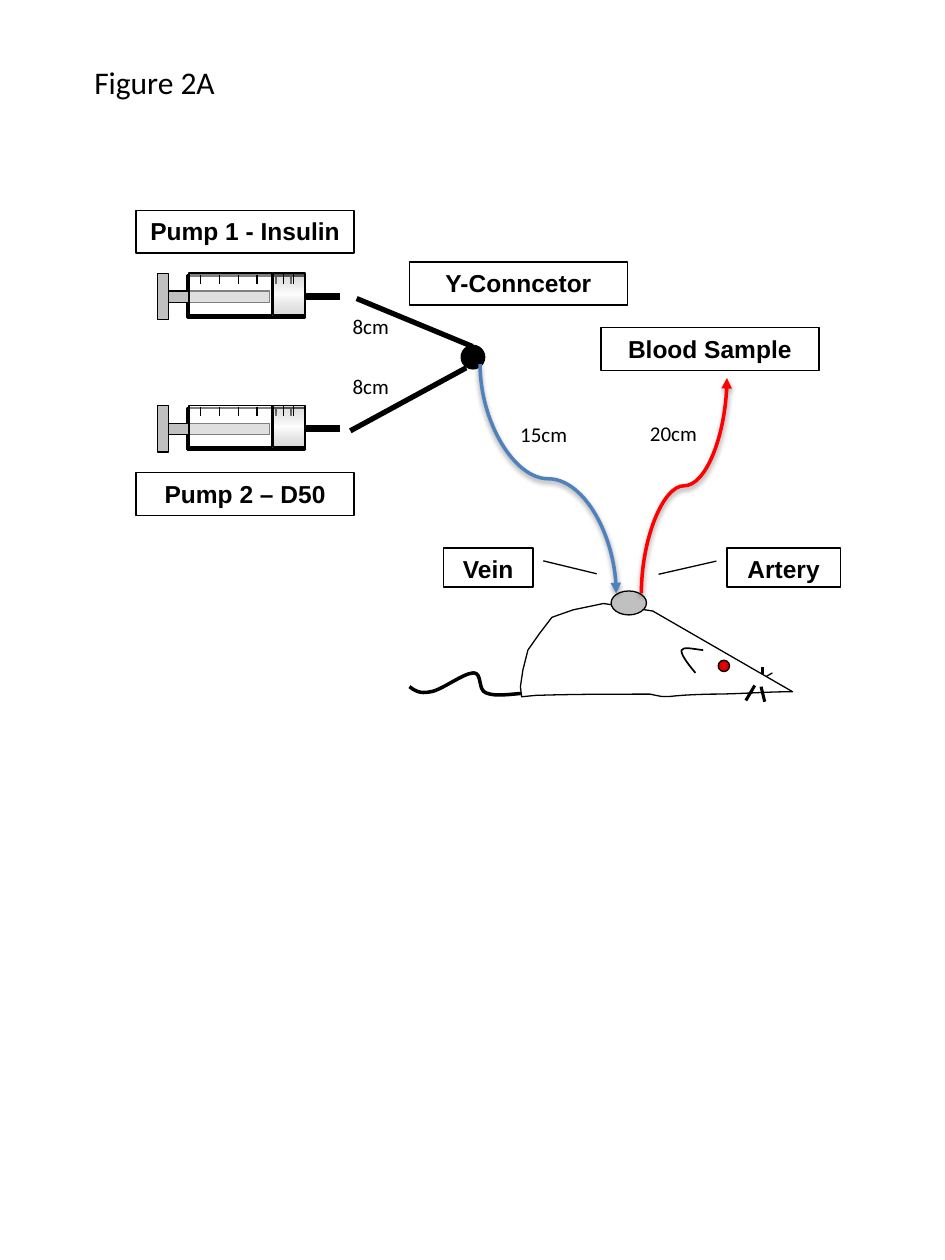
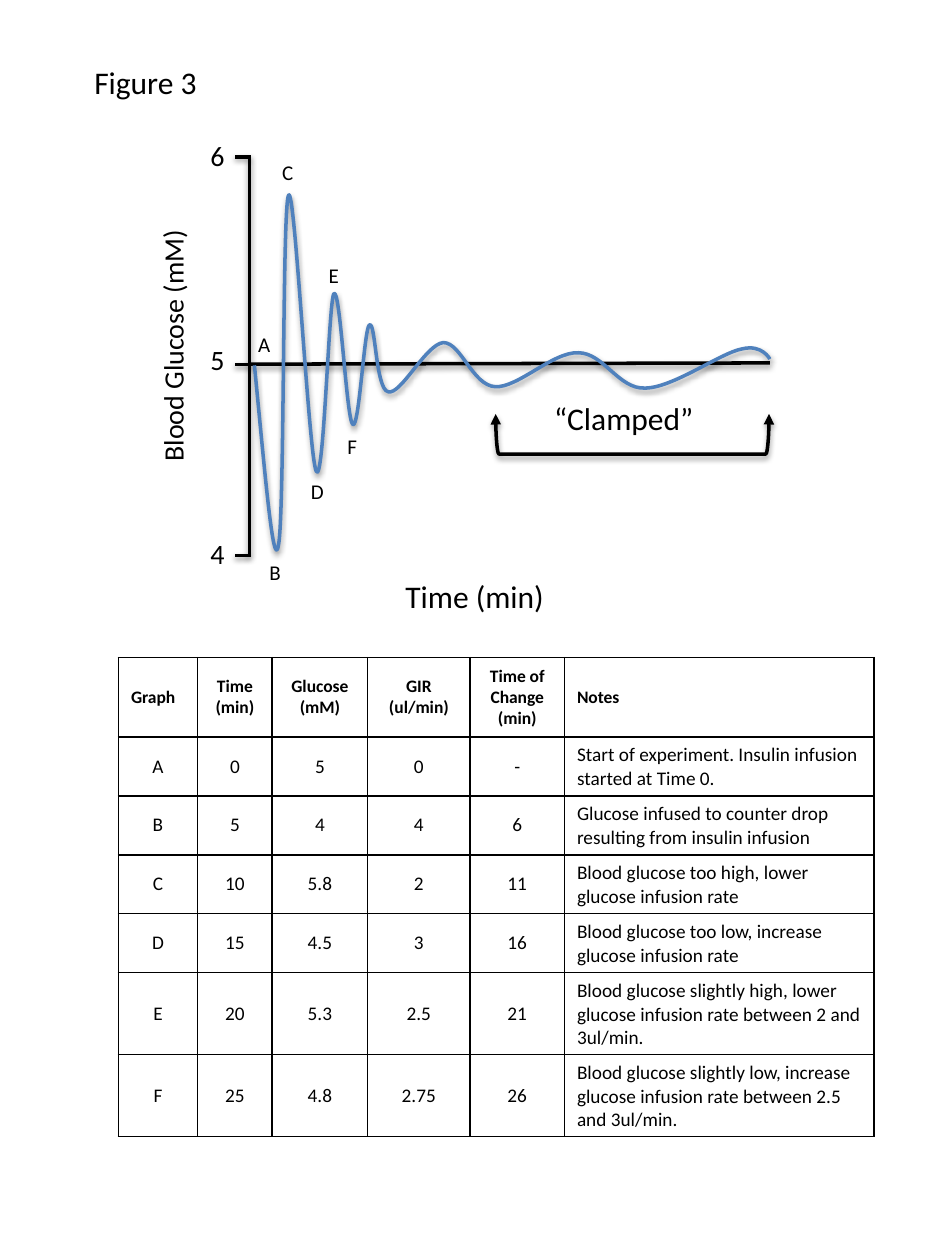
from lxml import etree
from pptx import Presentation
from pptx.dml.color import RGBColor
from pptx.enum.shapes import MSO_CONNECTOR as CONN, MSO_SHAPE as SHAPE
from pptx.enum.text import MSO_ANCHOR as ANCHOR, MSO_AUTO_SIZE as FIT, PP_ALIGN as ALIGN
from pptx.oxml import parse_xml
from pptx.oxml.ns import nsdecls, qn
from pptx.util import Pt

BLACK, WHITE, GREY = "000000", "FFFFFF", "C0C0C0"
BLUE, RED = "4F81BD", "FF0000"
LEFT, CENTER = ALIGN.LEFT, ALIGN.CENTER

EYE_FILL = [(0, RED, 100), (100, "B60000", 100)]
STOPPER_FILL = [(0, "ADADAD", 43), (50, WHITE, 65), (100, "ADADAD", 43)]

# Outlines: a start point, then segments of one point (line) or three (curve).
TAIL = [(301, 396),
        [(291.6, 396.7), (283, 398.2), (277.9, 396)],
        [(272.9, 394.6), (275.8, 384.5), (270.7, 384.5)],
        [(265, 384.5), (252, 394.6), (246.2, 395.3)],
        [(239.8, 396.7), (236.9, 394.6), (234, 392.4)]]
BODY = [(306, 397.4),
        [(329, 396.7), (347, 396.7), (371.5, 396.7)],
        [(385.2, 399.6), (375.1, 397.4), (406.1, 396.7)],
        [(421.9, 396.7), (437, 395.3), (452.9, 395.3)],
        [(373, 349.2)], [(344.9, 344.9)], [(327.6, 348.5)],
        [(315.4, 352.8)], [(308.2, 362.2)], [(301.7, 371.5)],
        [(298.8, 383)], [(297.4, 392.4)], [(298.1, 398.2)]]
EAR = [(401.8, 371.5),
       [(396, 370.8), (390.2, 369.4), (389.5, 371.5)],
       [(388.8, 373.7), (393.1, 379.4), (397.4, 384.5)]]
GLUCOSE = [(145.4, 208.8),
           [(151.2, 267.8), (156.2, 327.6), (159.1, 311.8)],
           [(162.7, 295.2), (161.3, 118.8), (164.9, 111.6)],
           [(168.5, 104.4), (176.4, 259.9), (180.7, 269.3)],
           [(185, 278.6), (187.9, 172.1), (190.8, 167.8)],
           [(194.4, 163.4), (198, 239.8), (201.6, 242.6)],
           [(205.2, 245.5), (208.1, 188.6), (211, 185.8)],
           [(214.6, 182.2), (214.6, 222.5), (221.8, 223.9)],
           [(229, 226.1), (243.4, 196.6), (253.4, 195.8)],
           [(263.5, 195.8), (270, 220.3), (283, 221)],
           [(295.9, 221.8), (316.1, 200.9), (330.5, 201.6)],
           [(344.9, 201.6), (353.5, 222.5), (368.6, 221.8)],
           [(384.5, 221.8), (411.8, 201.6), (424.1, 199.4)],
           [(435.6, 196.6), (439.9, 205.2), (439.9, 205.2)]]

COLUMNS = [45.2, 42.7, 54.5, 58.6, 53.9, 177]
ROWS = [
    ["Graph", "Time (min)", "Glucose\n(mM)", "GIR\n(ul/min)", "Time of Change (min)", "Notes"],
    ["A", "0", "5", "0", "-", "Start of experiment. Insulin infusion started at Time 0."],
    ["B", "5", "4", "4", "6", "Glucose infused to counter drop resulting from insulin infusion"],
    ["C", "10", "5.8", "2", "11", "Blood glucose too high, lower glucose infusion rate"],
    ["D", "15", "4.5", "3", "16", "Blood glucose too low, increase glucose infusion rate"],
    ["E", "20", "5.3", "2.5", "21",
     "Blood glucose slightly high, lower glucose infusion rate between 2 and 3ul/min."],
    ["F", "25", "4.8", "2.75", "26",
     "Blood glucose slightly low, increase glucose infusion rate between 2.5 and 3ul/min."],
]


def rgb(color):
    return RGBColor.from_string(color)


def pts(*values):
    return [Pt(v) for v in values]


def gradient(stops, direction):
    """Gradient fill from (position, colour, opacity) stops, all in percent."""
    gs = "".join(
        f'<a:gs pos="{pos * 1000}"><a:srgbClr val="{color}">'
        f'<a:alpha val="{alpha * 1000}"/></a:srgbClr></a:gs>'
        for pos, color, alpha in stops)
    return parse_xml(f'<a:gradFill {nsdecls("a")} rotWithShape="1">'
                     f'<a:gsLst>{gs}</a:gsLst>{direction}</a:gradFill>')


DOWN = '<a:lin ang="5400000" scaled="1"/>'
RADIAL = ('<a:path path="shape"><a:fillToRect l="50000" t="50000" '
          'r="50000" b="50000"/></a:path>')


class Figure:
    def __init__(self, prs):
        self.prs = prs

    def new_slide(self, title):
        self.slide = self.prs.slides.add_slide(self.prs.slide_layouts[6])
        self.end_group()
        self.text(title, 46.8, 32.4, 132.5, 29.5, 18)

    def start_group(self):
        self.shapes = self.slide.shapes.add_group_shape().shapes

    def end_group(self):
        self.shapes = self.slide.shapes

    def outline(self, sp, color, width, shadow=False, head=False, tail=False):
        """Set line, arrowheads at start (head) and end (tail), and shadow."""
        sp.line.color.rgb = rgb(color)
        sp.line.width = Pt(width)
        sp_pr = sp.element.spPr
        ln = sp_pr.find(qn("a:ln"))
        for on, tag in ((head, "a:headEnd"), (tail, "a:tailEnd")):
            if on:
                etree.SubElement(ln, qn(tag), type="triangle")
        shade = ('<a:outerShdw blurRad="40000" dist="20000" dir="5400000" rotWithShape="0">'
                 '<a:srgbClr val="000000"><a:alpha val="38000"/></a:srgbClr>'
                 '</a:outerShdw>') if shadow else ""
        sp_pr.append(parse_xml(f'<a:effectLst {nsdecls("a")}>{shade}</a:effectLst>'))
        return sp

    def fill(self, sp, fill, opacity=100, direction=DOWN):
        """Fill with nothing, a colour, or a list of gradient stops."""
        if isinstance(fill, str):
            sp.fill.solid()
            sp.fill.fore_color.rgb = rgb(fill)
            if opacity < 100:
                clr = sp.element.spPr.find(qn("a:solidFill"))[0]
                etree.SubElement(clr, qn("a:alpha"), val=str(opacity * 1000))
            return
        sp.fill.background()
        if fill:
            sp_pr = sp.element.spPr
            sp_pr.replace(sp_pr.find(qn("a:noFill")), gradient(fill, direction))

    def shape(self, kind, x, y, w, h, fill=None, line=BLACK, width=0.75,
              opacity=100, direction=DOWN, **ends):
        sp = self.shapes.add_shape(kind, *pts(x, y, w, h))
        self.fill(sp, fill, opacity, direction)
        return self.outline(sp, line, width, **ends)

    def line(self, x1, y1, x2, y2, width=0.75, **ends):
        sp = self.shapes.add_connector(CONN.STRAIGHT, *pts(x1, y1, x2, y2))
        return self.outline(sp, BLACK, width, **ends)

    def s_curve(self, x1, y1, x2, y2, color):
        """Curved arrow that leaves and arrives vertically (a turned connector)."""
        cx, cy = (x1 + x2) / 2, (y1 + y2) / 2
        dx, dy = (x2 - x1) / 2, (y2 - y1) / 2
        sp = self.shapes.add_connector(
            CONN.CURVE, *pts(cx + dy, cy - dx, cx - dy, cy + dx))
        sp.rotation = 270
        self.outline(sp, color, 2, shadow=True, tail=True)

    def freeform(self, outline, color=BLACK, width=0.75, fill=None, closed=False, **ends):
        start, *segments = outline
        builder = self.shapes.build_freeform(*pts(*start))
        builder.add_line_segments(
            [pts(*point) for seg in segments for point in seg], close=closed)
        sp = builder.convert_to_shape()
        lines = iter(list(sp.element.iter(qn("a:lnTo"))))
        for seg in segments:
            first, *rest = [next(lines) for _ in seg]
            if rest:
                curve = etree.Element(qn("a:cubicBezTo"))
                first.addprevious(curve)
                for node in (first, *rest):
                    curve.append(node[0])
                    node.getparent().remove(node)
        self.fill(sp, fill)
        self.outline(sp, color, width, **ends)

    def add_runs(self, tf, text, size, font="Calibri", bold=False, align=LEFT):
        for i, content in enumerate(text.split("\n")):
            p = tf.add_paragraph() if i else tf.paragraphs[0]
            p.alignment = align
            r = p.add_run()
            r.text = content
            r.font.name, r.font.size, r.font.bold = font, Pt(size), bold
            r.font.color.rgb = rgb(BLACK)

    def no_margins(self, tf):
        tf.margin_left = tf.margin_right = tf.margin_top = tf.margin_bottom = 0

    def text(self, text, x, y, w, h, size=12, align=LEFT):
        sp = self.shapes.add_textbox(*pts(x, y, w, h))
        sp.text_frame.word_wrap = True
        sp.text_frame.auto_size = FIT.SHAPE_TO_FIT_TEXT
        self.add_runs(sp.text_frame, text, size, align=align)
        return sp

    def label(self, text, x, y, w=124.6, h=24.5, kind=SHAPE.RECTANGLE):
        sp = self.shape(kind, x, y, w, h)
        tf = sp.text_frame
        tf.word_wrap, tf.vertical_anchor = True, ANCHOR.TOP
        self.add_runs(tf, text, 14, "Arial", True, CENTER)
        return sp

    def callout(self, text, x, w, adjustments):
        sp = self.label(text, x, 313.2, w, 22.3, SHAPE.LINE_CALLOUT_2)
        for i, value in enumerate(adjustments):
            sp.adjustments[i] = value

    def axis_value(self, text, y):
        sp = self.shape(SHAPE.RECTANGLE, 120.2, y, 8.6, 19.4, line=WHITE, width=2)
        tf = sp.text_frame
        self.no_margins(tf)
        tf.word_wrap, tf.vertical_anchor = False, ANCHOR.TOP
        tf.auto_size = FIT.SHAPE_TO_FIT_TEXT
        self.add_runs(tf, text, 16)

    def syringe(self, y):
        box = SHAPE.RECTANGLE
        barrel = self.shape(box, 107.3, y + 1.4, 67, 23.8, width=1.5)
        nozzle = self.line(174.3, y + 13.3, 194.4, y + 13.3, 4)
        nozzle.begin_connect(barrel, 3)
        self.shape(box, 96.5, y + 10.1, 57.6, 6.5, GREY)
        self.shape(box, 108, y, 47.5, 23.8, WHITE, width=1.05, opacity=50)
        self.shape(box, 90, y, 6.5, 26.6, GREY)
        for x in [114.5 + 10.8 * i for i in range(5)] + [166.3]:
            self.line(x, y + 0.7, x, y + 5.8)
        self.shape(box, 156.2, y, 18, 23.8, STOPPER_FILL, width=1)
        for x in (162, 167.8):
            self.line(x, y, x, y + 5.8)

    def mouse(self):
        self.start_group()
        self.freeform(TAIL, width=2)
        self.freeform(BODY, fill=WHITE, closed=True)
        self.shape(SHAPE.OVAL, 410.4, 377.3, 6.5, 6.5, EYE_FILL, direction=RADIAL)
        for whisker in ((431.3, 391.7, 426.2, 400.3, 1.75), (435.6, 385.2, 435.6, 380.9, 1.75),
                        (434.9, 392.4, 437, 401, 1.75), (437.8, 386.6, 441.4, 384.5)):
            self.line(*whisker)
        self.freeform(EAR, width=0.95)
        self.end_group()

    def table(self, rows, x, y, widths, header_height, row_height):
        height = header_height + row_height * (len(rows) - 1)
        frame = self.shapes.add_table(
            len(rows), len(widths), *pts(x, y, sum(widths), height))
        table = frame.table
        table.first_row = table.horz_banding = False
        for column, width in zip(table.columns, widths):
            column.width = Pt(width)
        for i, row in enumerate(rows):
            table.rows[i].height = Pt(row_height if i else header_height)
            for j, text in enumerate(row):
                cell = table.cell(i, j)
                left = j == len(row) - 1 or i == j == 0
                self.add_runs(cell.text_frame, text, 11 if i else 10, bold=i == 0,
                              align=LEFT if left else CENTER)
                cell.vertical_anchor = ANCHOR.MIDDLE
                tc_pr = cell._tc.get_or_add_tcPr()
                for side in "LRTB":
                    tc_pr.append(parse_xml(
                        f'<a:ln{side} {nsdecls("a")} w="12700"><a:solidFill>'
                        f'<a:srgbClr val="{BLACK}"/></a:solidFill></a:ln{side}>'))
                cell.fill.background()


def draw_infusion_setup(fig):
    fig.new_slide("Figure 2A")
    fig.mouse()
    fig.callout("Vein", 253.4, 51.1, (0.327, 1.117, 0.327, 1.117, 0.659, 1.714))
    fig.callout("Artery", 415.4, 64.8, (0.333, -0.093, 0.333, -0.093, 0.671, -0.603))
    fig.shape(SHAPE.OVAL, 349.2, 337.7, 20.2, 13.7, GREY)
    for y in (156.2, 231.8):
        fig.syringe(y)
    fig.line(203.8, 170.6, 270, 198, 3)
    fig.line(200.2, 246.2, 266.4, 210.2, 3)
    fig.shape(SHAPE.OVAL, 264.2, 198, 12.2, 12.2, BLACK, width=2)
    for text, x, y in (("Blood Sample", 343.4, 187.2), ("Pump 1 - Insulin", 77.8, 120.2),
                       ("Pump 2 – D50", 77.8, 270), ("Y-Conncetor", 234, 149.8)):
        fig.label(text, x, y)
    fig.s_curve(274.3, 208.1, 352.1, 339.1, BLUE)
    fig.s_curve(366.5, 339.1, 415.4, 216, RED)
    for text, x, y in (("8cm", 194.4, 210.2), ("8cm", 194.4, 175.7),
                       ("15cm", 290.2, 237.6), ("20cm", 364.3, 236.9)):
        fig.text(text, x, y, 53.3, 21.6)


def draw_glucose_clamp(fig):
    fig.new_slide("Figure 3")
    fig.line(142.6, 89.3, 142.6, 317.5, 2, shadow=True)
    fig.line(142.6, 208.1, 439.9, 207.4, 2, shadow=True)
    fig.freeform(GLUCOSE, BLUE, 2, shadow=True)
    axis_title = fig.text("Blood Glucose (mM)", -14.4, 187.9, 226.1, 19.4, 16, CENTER)
    fig.no_margins(axis_title.text_frame)
    axis_title.rotation = 270
    for text, y, tick in (("4", 306.7, 317.5), ("5", 195.8, 208.4), ("6", 79.2, 89.6)):
        fig.axis_value(text, y)
        fig.line(143.2, tick, 134.2, tick, 2, shadow=True)
    fig.text("Time (min)", 224.6, 326.2, 132.5, 29.5, 18)
    bracket = fig.shape(SHAPE.LEFT_BRACKET, 349.9, 169.9, 23, 156.2, width=2,
                        shadow=True, head=True, tail=True)
    bracket.rotation = 270
    fig.text("“Clamped”", 290.2, 224.6, 132.5, 29.5, 18, CENTER)
    fig.table(ROWS, 67.7, 375.8, COLUMNS, 45.4, 29.5)
    for text, x, y in (("A", 140.4, 185.8), ("B", 146.9, 316.1), ("C", 154.1, 87.8),
                       ("D", 170.6, 270), ("E", 180.7, 146.2), ("F", 191.5, 244.1)):
        fig.text(text, x, y, 28.8, 21.6)


def main():
    prs = Presentation()
    prs.slide_width, prs.slide_height = Pt(540), Pt(720)
    fig = Figure(prs)
    draw_infusion_setup(fig)
    draw_glucose_clamp(fig)
    prs.save("out.pptx")


if __name__ == "__main__":
    main()
